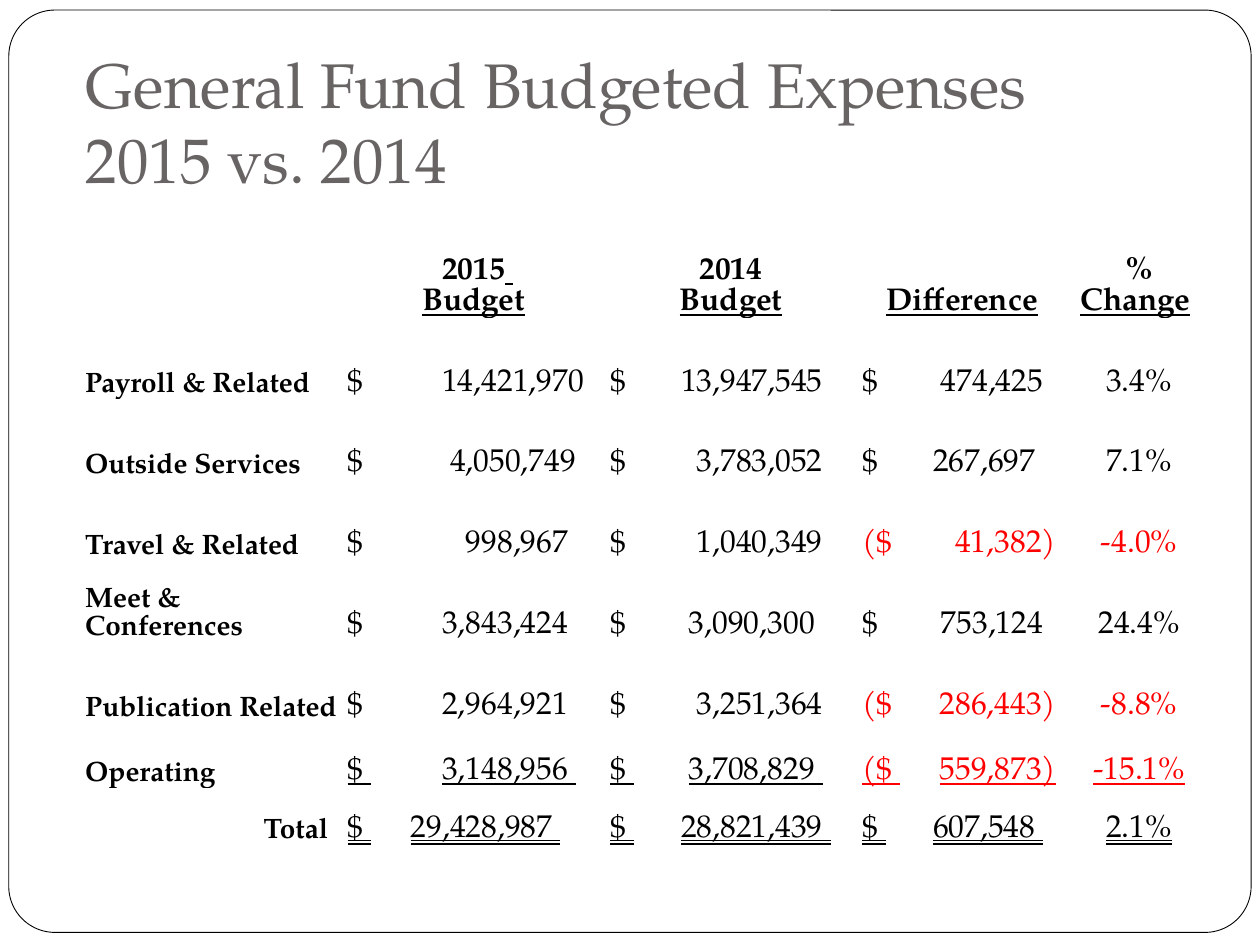
"""Build the slide comparing general fund budgeted expenses, 2015 vs. 2014."""
import pptx
import pptx.util
import pptx.dml.color
import pptx.enum.shapes
import pptx.enum.text
from dataclasses import dataclass


@dataclass(frozen=True)
class Theme:
    font: str = "TeX Gyre Pagella"
    title: str = "696464"
    ink: str = "000000"
    loss: str = "FF0000"
    paper: str = "FFFFFF"
    title_size: int = 36
    figure_size: int = 18
    label_size: int = 16


theme = Theme()
Align = pptx.enum.text.PP_ALIGN
Underline = pptx.enum.text.MSO_UNDERLINE
Bottom = pptx.enum.text.MSO_ANCHOR.BOTTOM

deck = pptx.Presentation()
deck.slide_width = pptx.util.Inches(10)
deck.slide_height = pptx.util.Inches(7.5)
page = deck.slides.add_slide(deck.slide_layouts[6])


def grid(*units):
    """Turn units of a 120 by 90 grid into lengths."""
    return [pptx.util.Emu(round(unit * deck.slide_width / 120)) for unit in units]


def style(span, size, color, bold=False, underline=Underline.NONE):
    """Format one run of text."""
    span.font.name = theme.font
    span.font.size = pptx.util.Pt(size)
    span.font.color.rgb = pptx.dml.color.RGBColor.from_string(color)
    span.font.bold = bold
    span.font.underline = underline


frame = page.shapes.add_shape(
    pptx.enum.shapes.MSO_SHAPE.ROUNDED_RECTANGLE, *grid(0.84, 0.96, 118.32, 87.84))
frame.adjustments[0] = 0.05
frame.shadow.inherit = False
frame.fill.solid()
frame.fill.fore_color.rgb = pptx.dml.color.RGBColor.from_string(theme.paper)
frame.line.color.rgb = pptx.dml.color.RGBColor.from_string(theme.ink)
frame.line.width = pptx.util.Pt(0.5)

title = page.shapes.add_textbox(*grid(7, 3.9, 105, 16)).text_frame
title.word_wrap = True
title.vertical_anchor = Bottom
title.margin_bottom = pptx.util.Inches(0.1)
title.text = "General Fund Budgeted Expenses\v2015 vs. 2014"
for span in title.paragraphs[0].runs:
    style(span, theme.title_size, theme.title)

column_widths = [25, 25, 24, 20, 13]
row_heights = [12.4] + [7.7] * 5 + [6.2, 5.5]
table = page.shapes.add_table(
    len(row_heights), len(column_widths),
    *grid(8, 18, sum(column_widths), sum(row_heights))).table
table.first_row = False
table.horz_banding = False
for column, width in zip(table.columns, grid(*column_widths)):
    column.width = width
for row, height in zip(table.rows, grid(*row_heights)):
    row.height = height
for cell in table.iter_cells():
    cell.fill.background()
    cell.vertical_anchor = Bottom
    cell.margin_left = cell.margin_right = cell.margin_top = pptx.util.Inches(0.01)
    cell.margin_bottom = 0

plain, lined = Underline.NONE, Underline.SINGLE_LINE
headings = [
    [[("2015", True, plain), (" ", True, lined)],
     [("Budget", True, lined), (" ", False, plain)]],
    [[("2014 ", True, plain)], [("Budget", True, lined), (" ", False, plain)]],
    [[("Difference", True, lined), (" ", False, plain)]],
    [[("% ", True, plain), ("Change", True, lined), (" ", False, plain)]],
]
for column, lines in enumerate(headings, start=1):
    box = table.cell(0, column).text_frame
    for number, line in enumerate(lines):
        para = box.add_paragraph() if number else box.paragraphs[0]
        para.alignment = Align.CENTER
        for text, bold, underline in line:
            span = para.add_run()
            span.text = text
            style(span, theme.figure_size, theme.ink, bold, underline)

# label, amounts, percent change, gaps after the dollar signs in space widths
expenses = [
    ("Payroll & Related", "14,421,970", "13,947,545", "474,425", "3.4%", (10, 7, 8)),
    ("Outside Services", "4,050,749", "3,783,052", "267,697", "7.1%", (11, 9, 7)),
    ("Travel & Related", "998,967", "1,040,349", "(41,382)", "-4.0%", (13, 9, 8)),
    ("Meet & Conferences", "3,843,424", "3,090,300", "753,124", "24.4%", (10, 8, 8)),
    ("Publication Related", "2,964,921", "3,251,364", "(286,443)", "-8.8%", (10, 9, 6)),
    ("Operating", "3,148,956 ", "3,708,829 ", "(559,873)", "-15.1%", (10, 8, 6)),
    ("Total ", "29,428,987 ", "28,821,439 ", "607,548 ", "2.1%", (6, 7, 7)),
]
space_width = theme.figure_size * 25
underlines = {"Operating": lined, "Total ": Underline.DOUBLE_LINE}
for row, (label, *figures, gaps) in enumerate(expenses, start=1):
    label_cell = table.cell(row, 0)
    para = label_cell.text_frame.paragraphs[0]
    para.text = label
    style(para.runs[0], theme.label_size, theme.ink, bold=True)
    if label == "Total ":
        para.alignment = Align.RIGHT
        label_cell.margin_right = pptx.util.Inches(0.09)
    for column, figure in enumerate(figures, start=1):
        para = table.cell(row, column).text_frame.paragraphs[0]
        color = theme.loss if figure[0] in "(-" else theme.ink
        if column == len(figures):
            para.alignment = Align.CENTER
            pieces = [figure]
        else:
            sign = "($" if figure[0] == "(" else "$"
            pieces = [sign, " ", figure.lstrip("(")]
        for piece in pieces:
            span = para.add_run()
            span.text = piece
            style(span, theme.figure_size, color,
                  underline=underlines.get(label, plain))
            if piece == " ":
                extra = (gaps[column - 1] - 1) * space_width
                span._r.get_or_add_rPr().set("spc", str(extra))

deck.save("out.pptx")
